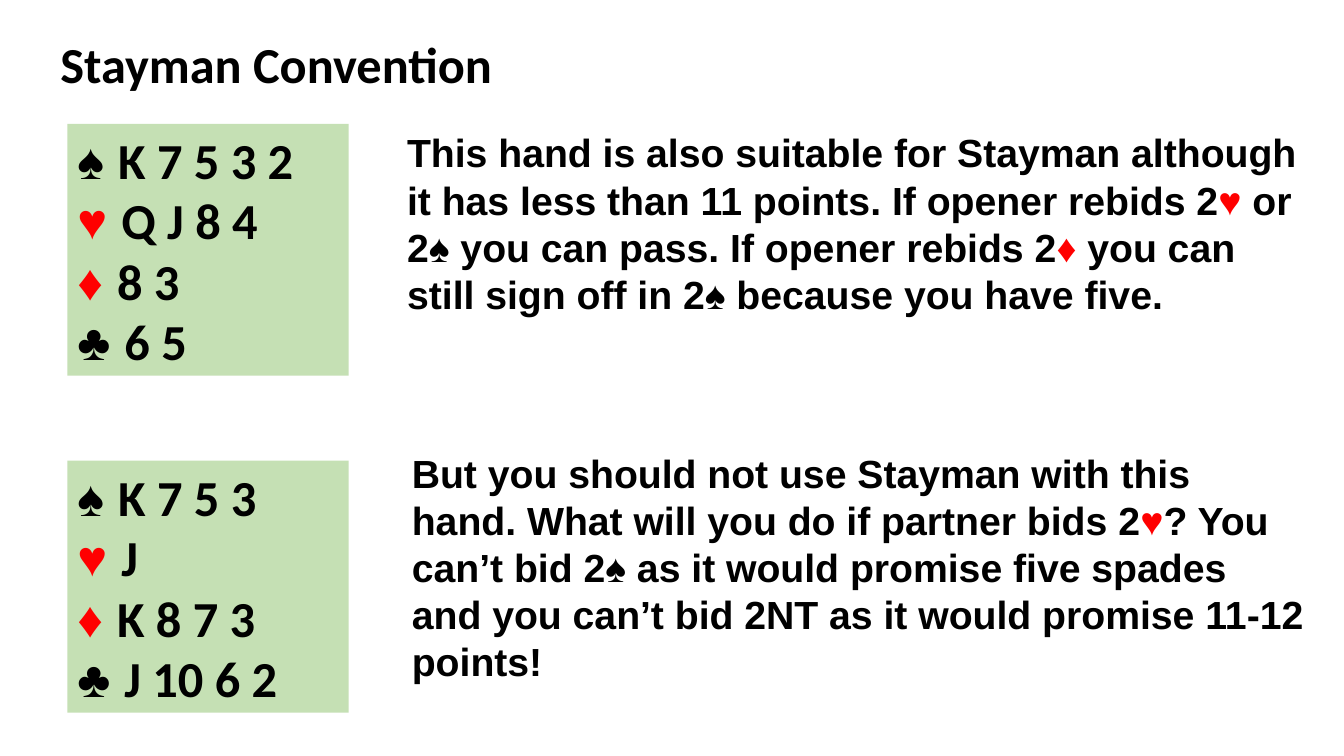
from dataclasses import dataclass
from itertools import groupby

from pptx import Presentation
from pptx.dml.color import RGBColor
from pptx.enum.shapes import MSO_SHAPE
from pptx.enum.text import MSO_ANCHOR, MSO_AUTO_SIZE, PP_ALIGN
from pptx.util import Cm, Pt

RECT = MSO_SHAPE.RECTANGLE
TOP = MSO_ANCHOR.TOP
GROW = MSO_AUTO_SIZE.SHAPE_TO_FIT_TEXT
LEFT = PP_ALIGN.LEFT

TITLE = "Stayman Convention"
SUITS = "♠♥♦♣"
RED_SUITS = "♥♦"
# Cards by suit, top of the hand; note text and its left, top, width, height
DEALS = [
    (["K 7 5 3 2", "Q J 8 4", "8 3", "6 5"], 3.12,
     "This hand is also suitable for Stayman although it has less than 11 "
     "points. If opener rebids 2♥ or 2♠ you can pass. If opener rebids 2♦ "
     "you can still sign off in 2♠ because you have five.",
     (10.01, 3.12, 23.24, 4.98)),
    (["K 7 5 3", "J", "K 8 7 3", "J 10 6 2"], 11.61,
     "But you should not use Stayman with this hand. What will you do if "
     "partner bids 2♥? You can’t bid 2♠ as it would promise five spades "
     "and you can’t bid 2NT as it would promise 11-12 points!",
     (10.13, 11.2, 23.01, 6.17)),
]
TITLE_BOX = (1.27, 0.71, 12.19, 1.78)
HAND_LEFT, HAND_WIDTH, HAND_HEIGHT = 1.7, 7.09, 6.35


@dataclass(frozen=True)
class Theme:
    ink: RGBColor = RGBColor(0, 0, 0)
    red: RGBColor = RGBColor(0xFF, 0, 0)
    felt: RGBColor = RGBColor(0xC5, 0xE0, 0xB4)
    head: str = "Calibri"
    body: str = "Arial"
    large: Pt = Pt(36)
    small: Pt = Pt(28)


THEME = Theme()


def style(run, face, size, color=THEME.ink, bold=True):
    font = run.font
    font.name, font.size, font.bold = face, size, bold
    font.color.rgb = color


def add_run(para, text):
    run = para.add_run()
    run.text = text
    return run


def suit_color(mark):
    return THEME.red if mark in RED_SUITS else THEME.ink


def set_frame(shape):
    frame = shape.text_frame
    frame.word_wrap = True
    frame.auto_size = GROW
    frame.vertical_anchor = TOP
    return frame


def add_box(slide, box):
    return set_frame(slide.shapes.add_textbox(*map(Cm, box)))


def add_title(slide):
    frame = add_box(slide, TITLE_BOX)
    frame.text = TITLE
    style(frame.paragraphs[0].runs[0], THEME.head, THEME.large)


def add_hand(slide, cards, top):
    box = (HAND_LEFT, top, HAND_WIDTH, HAND_HEIGHT)
    shape = slide.shapes.add_shape(RECT, *map(Cm, box))
    shape.shadow.inherit = False
    shape.fill.solid()
    shape.fill.fore_color.rgb = THEME.felt
    shape.line.fill.background()
    frame = set_frame(shape)
    for row, (suit, ranks) in enumerate(zip(SUITS, cards)):
        para = frame.add_paragraph() if row else frame.paragraphs[0]
        para.alignment = LEFT
        style(add_run(para, suit + " "), THEME.body, THEME.large,
              suit_color(suit), bold=row > 0)
        style(add_run(para, ranks), THEME.head, THEME.large)


def add_note(slide, text, box):
    """Add a paragraph in which the red suits stand out."""
    para = add_box(slide, box).paragraphs[0]
    for color, chars in groupby(text, suit_color):
        style(add_run(para, "".join(chars)), THEME.body, THEME.small, color)


def main():
    deck = Presentation()
    deck.slide_width, deck.slide_height = Cm(33.87), Cm(19.05)
    slide = deck.slides.add_slide(deck.slide_layouts[6])
    add_title(slide)
    for cards, top, note, box in DEALS:
        add_hand(slide, cards, top)
        add_note(slide, note, box)
    deck.save("out.pptx")


if __name__ == "__main__":
    main()
